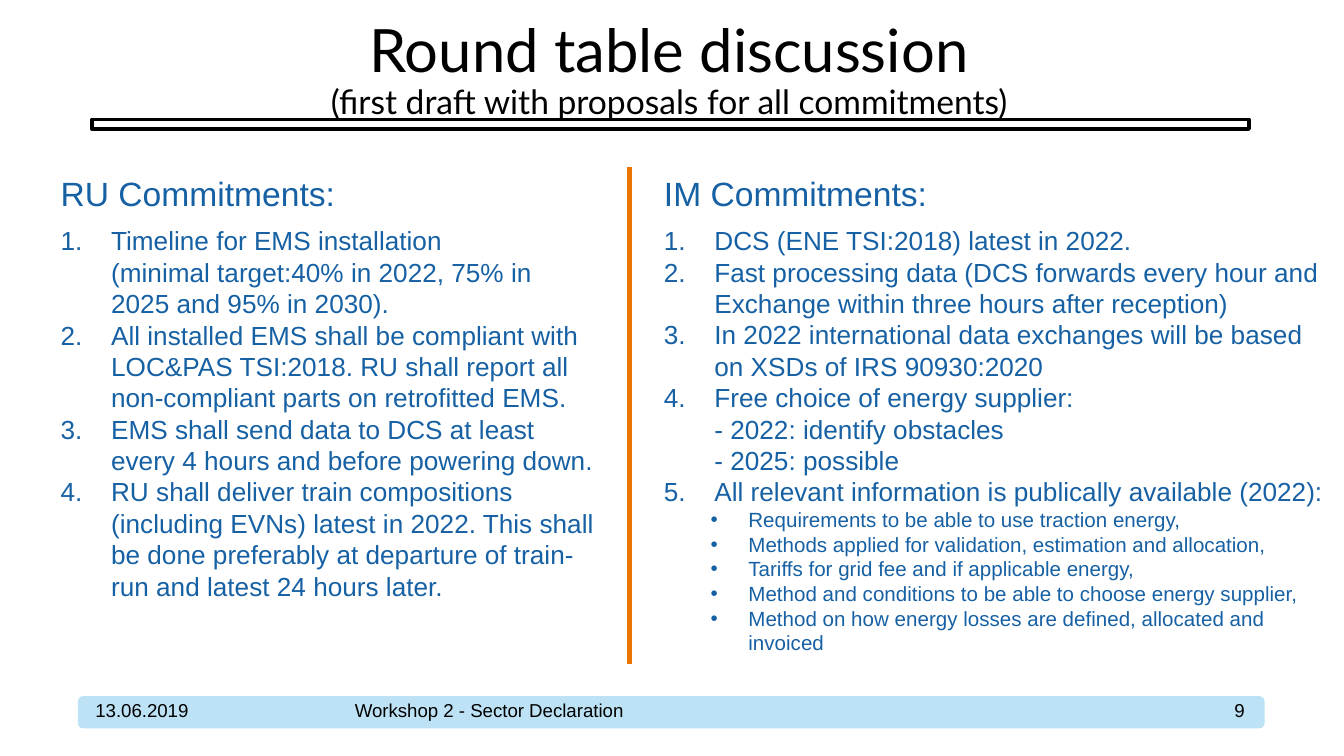
from dataclasses import dataclass
from typing import Optional

from lxml.etree import SubElement
from pptx import Presentation
from pptx.dml.color import RGBColor
from pptx.enum.shapes import MSO_CONNECTOR, MSO_SHAPE
from pptx.enum.text import MSO_ANCHOR, MSO_AUTO_SIZE, PP_ALIGN
from pptx.oxml.ns import qn
from pptx.util import Inches, Pt

BLACK, BLUE, ORANGE, PALE_BLUE = "000000", "1660A4", "EC7405", "BDE2F6"


@dataclass(frozen=True)
class Area:
    """A rectangle in percent of the slide's width and height."""
    left: float
    top: float
    width: float
    height: float


@dataclass(frozen=True)
class ListStyle:
    """Text size, margin and hanging indent in points."""
    size: float
    margin: float
    hanging: float
    level: int
    bullet: Optional[str] = None


@dataclass(frozen=True)
class Column:
    area: Area
    heading: str
    commitments: tuple[str, ...]
    details: tuple[str, ...] = ()


@dataclass(frozen=True)
class FooterField:
    left: float
    width: float
    text: str
    alignment: PP_ALIGN = PP_ALIGN.LEFT


NUMBERED = ListStyle(14, 27, 27, 0)
BULLETED = ListStyle(11, 45.25, 20.25, 1, "•")
FOOTER_TOP, COLUMN_TOP = 92.09, 22.04

COLUMNS = (
    Column(
        Area(3.53, COLUMN_TOP, 41.8, 63.64),
        "RU Commitments:",
        (
            "Timeline for EMS installation\n"
            "(minimal target:40% in 2022, 75% in 2025 and 95% in 2030).",
            "All installed EMS shall be compliant with LOC&PAS TSI:2018. "
            "RU shall report all non-compliant parts on retrofitted EMS.",
            "EMS shall send data to DCS at least every 4 hours and before powering down.",
            "RU shall deliver train compositions (including EVNs) latest in 2022. This shall "
            "be done preferably at departure of train-run and latest 24 hours later.",
        ),
    ),
    Column(
        Area(48.42, COLUMN_TOP, 51.6, 66.13),
        "IM Commitments:",
        (
            "DCS (ENE TSI:2018) latest in 2022.",
            "Fast processing data (DCS forwards every hour and "
            "Exchange within three hours after reception)",
            "In 2022 international data exchanges will be based on XSDs of IRS 90930:2020",
            "Free choice of energy supplier:\n- 2022: identify obstacles\n- 2025: possible",
            "All relevant information is publically available (2022):",
        ),
        (
            "Requirements to be able to use traction energy,",
            "Methods applied for validation, estimation and allocation,",
            "Tariffs for grid fee and if applicable energy,",
            "Method and conditions to be able to choose energy supplier,",
            "Method on how energy losses are defined, allocated and invoiced",
        ),
    ),
)
FOOTER = (
    FooterField(7.1, 17.7, "13.06.2019"),
    FooterField(26.4, 47.5, "Workshop 2 - Sector Declaration"),
    FooterField(87.8, 4.8, "9", PP_ALIGN.RIGHT),
)

presentation = Presentation()
presentation.slide_width = Inches(10)
presentation.slide_height = presentation.slide_width * 9 // 16
slide = presentation.slides.add_slide(presentation.slide_layouts[6])


def color(value: str) -> RGBColor:
    return RGBColor.from_string(value)


def across(percent: float) -> int:
    return round(presentation.slide_width * percent / 100)


def down(percent: float) -> int:
    return round(presentation.slide_height * percent / 100)


def box(area: Area) -> tuple[int, int, int, int]:
    return across(area.left), down(area.top), across(area.width), down(area.height)


def add_bar(kind: MSO_SHAPE, area: Area):
    """Add a shape with neither fill, line nor shadow."""
    shape = slide.shapes.add_shape(kind, *box(area))
    shape.shadow.inherit = False
    shape.fill.background()
    shape.line.fill.background()
    return shape


def add_text_frame(area: Area, anchor: MSO_ANCHOR, side: float = 0.1, end: float = 0.05):
    frame = slide.shapes.add_textbox(*box(area)).text_frame
    frame.word_wrap = True
    frame.vertical_anchor = anchor
    frame.margin_left = frame.margin_right = Inches(side)
    frame.margin_top = frame.margin_bottom = Inches(end)
    return frame


def add_run(paragraph, text: str, size: float, value: str = BLACK, font: str = "Arial") -> None:
    """Add text, turning each newline into a line break."""
    for index, line in enumerate(text.split("\n")):
        if index:
            paragraph.add_line_break()
        run = paragraph.add_run()
        run.text = line
        run.font.name = font
        run.font.size = Pt(size)
        run.font.color.rgb = color(value)


def add_list_item(frame, text: str, style: ListStyle) -> None:
    paragraph = frame.add_paragraph()
    paragraph.level = style.level
    properties = paragraph._p.get_or_add_pPr()
    properties.set("marL", str(Pt(style.margin)))
    properties.set("indent", str(-Pt(style.hanging)))
    SubElement(properties, qn("a:buFont"), typeface="Arial")
    if style.bullet:
        SubElement(properties, qn("a:buChar"), char=style.bullet)
    else:
        SubElement(properties, qn("a:buAutoNum"), type="arabicPeriod")
    add_run(paragraph, text, style.size, BLUE)


def add_column(column: Column) -> None:
    frame = add_text_frame(column.area, MSO_ANCHOR.TOP)
    frame.auto_size = MSO_AUTO_SIZE.SHAPE_TO_FIT_TEXT
    heading = frame.paragraphs[0]
    heading.space_after = Pt(6)
    add_run(heading, column.heading, 18, BLUE)
    for items, style in ((column.commitments, NUMBERED), (column.details, BULLETED)):
        for item in items:
            add_list_item(frame, item, style)


def add_footer() -> None:
    band = add_bar(MSO_SHAPE.ROUNDED_RECTANGLE, Area(5.8, FOOTER_TOP, 88.3, 4.27))
    band.fill.solid()
    band.fill.fore_color.rgb = color(PALE_BLUE)
    for field in FOOTER:
        area = Area(field.left, FOOTER_TOP, field.width, 3.73)
        paragraph = add_text_frame(area, MSO_ANCHOR.MIDDLE, 0, 0).paragraphs[0]
        paragraph.alignment = field.alignment
        add_run(paragraph, field.text, 10)


def add_title() -> None:
    rule = add_bar(MSO_SHAPE.RECTANGLE, Area(6.84, 15.82, 86.1, 1.24))
    rule.line.color.rgb = color(BLACK)
    rule.line.width = Pt(2)
    frame = add_text_frame(Area(6.7, 2.49, 86.2, 13.87), MSO_ANCHOR.MIDDLE, 0.07, 0.04)
    paragraph = frame.paragraphs[0]
    paragraph.alignment = PP_ALIGN.CENTER
    paragraph.line_spacing = 0.9
    add_run(paragraph, "Round table discussion", 32, font="Lato")
    paragraph.add_line_break()
    add_run(paragraph, "(first draft with proposals for all commitments)", 18, font="Lato")


def add_divider(left: float, top: float, bottom: float) -> None:
    divider = slide.shapes.add_connector(
        MSO_CONNECTOR.STRAIGHT, across(left), down(top), across(left), down(bottom))
    divider.line.color.rgb = color(ORANGE)
    divider.line.width = Pt(2.5)
    SubElement(divider._element.spPr, qn("a:effectLst"))


add_footer()
add_title()
add_divider(46.86, COLUMN_TOP, 87.82)
for commitment_column in COLUMNS:
    add_column(commitment_column)
presentation.save("out.pptx")
